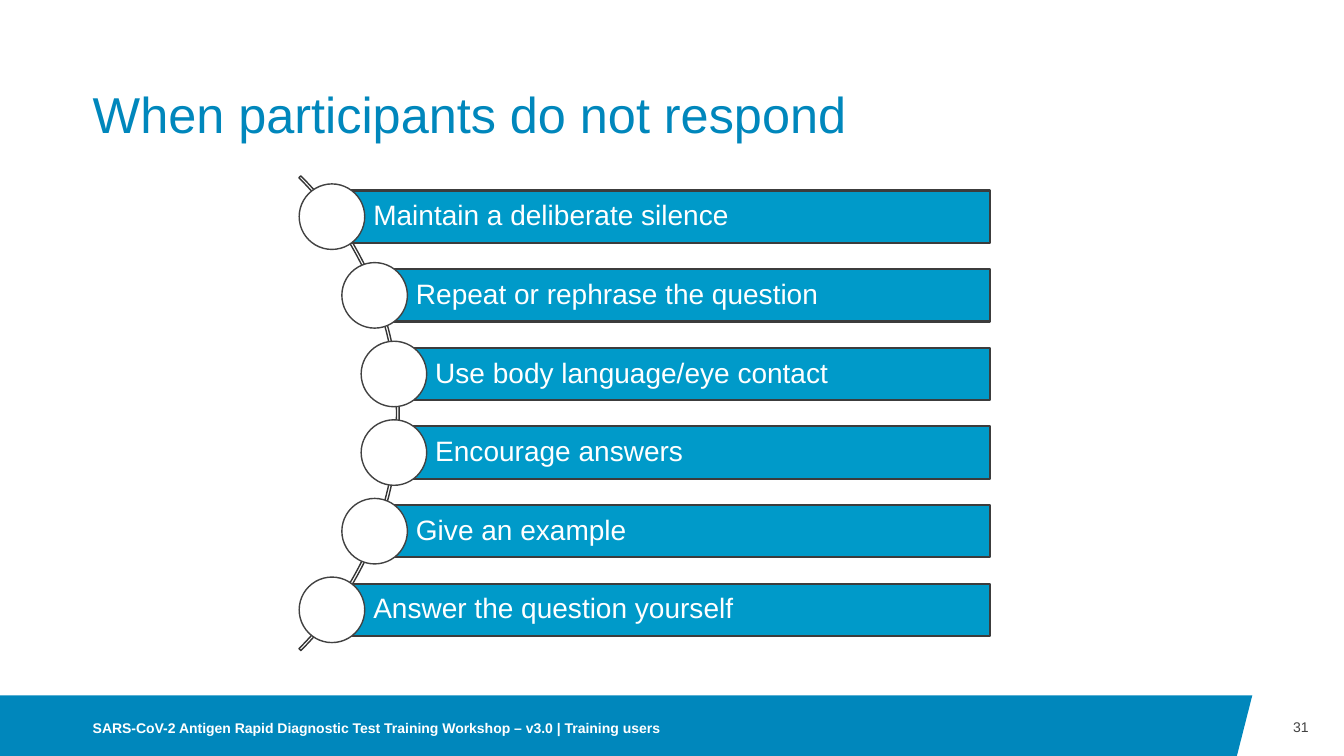
from dataclasses import dataclass
from math import sqrt

from pptx import Presentation
from pptx.dml.color import RGBColor
from pptx.enum.shapes import MSO_SHAPE as Shape
from pptx.enum.text import MSO_ANCHOR as Anchor, PP_ALIGN as Align
from pptx.util import Inches, Pt


@dataclass(frozen=True)
class Theme:
    font: str = "Arial"
    brand: str = "0087BC"
    bar: str = "009AC9"
    bar_edge: str = "3C3C3C"
    arc_edge: str = "353535"
    grey: str = "424242"
    white: str = "FFFFFF"
    title_size: int = 36
    step_size: int = 20
    footer_size: int = 10


class SlideBuilder:
    def __init__(self, slide, theme):
        self.shapes = slide.shapes
        self.theme = theme

    def paint(self, shape, fill=None, edge=None, width=1):
        shape.shadow.inherit = False
        if fill:
            shape.fill.solid()
            shape.fill.fore_color.rgb = RGBColor.from_string(fill)
        else:
            shape.fill.background()
        if edge:
            shape.line.color.rgb = RGBColor.from_string(edge)
            shape.line.width = Pt(width)
        else:
            shape.line.fill.background()

    def label(self, shape, text, size, color, anchor=Anchor.MIDDLE,
              align=Align.LEFT, bold=False, insets=(0, 0, 0, 0), spacing=1.0):
        frame = shape.text_frame
        frame.text = text
        frame.word_wrap = True
        frame.vertical_anchor = anchor
        (frame.margin_left, frame.margin_top,
         frame.margin_right, frame.margin_bottom) = map(Inches, insets)
        paragraph = frame.paragraphs[0]
        paragraph.alignment = align
        paragraph.line_spacing = spacing
        font = paragraph.runs[0].font
        font.name, font.size, font.bold = self.theme.font, Pt(size), bold
        font.color.rgb = RGBColor.from_string(color)

    def text(self, box, text, size, color, **style):
        self.label(self.shapes.add_textbox(*map(Inches, box)), text, size, color, **style)

    def preset(self, kind, box, fill=None, edge=None, width=1):
        shape = self.shapes.add_shape(kind, *map(Inches, box))
        self.paint(shape, fill, edge, width)
        return shape

    def outline(self, points, fill):
        corners = [(Inches(x), Inches(y)) for x, y in points]
        builder = self.shapes.build_freeform(*corners[0])
        builder.add_line_segments(corners[1:], close=True)
        self.paint(builder.convert_to_shape(), fill)


STEPS = [
    "Maintain a deliberate silence",
    "Repeat or rephrase the question",
    "Use body language/eye contact",
    "Encourage answers",
    "Give an example",
    "Answer the question yourself",
]
ARC_X, ARC_Y, ARC_RADIUS = 0.63, 4.1, 3.33
NODE_RADIUS = 3.3
STEP_PITCH = 0.78
BAR_HEIGHT, BAR_RIGHT = 0.52, 9.82
NODE_SIZE = 0.65


def add_steps(builder):
    theme = builder.theme
    # Thin arc running behind the nodes
    arc = builder.preset(
        Shape.BLOCK_ARC,
        (ARC_X - ARC_RADIUS, ARC_Y - ARC_RADIUS, 2 * ARC_RADIUS, 2 * ARC_RADIUS),
        edge=theme.arc_edge)
    for index, value in enumerate((189, 27, 0.004)):
        arc.adjustments[index] = value

    # Bars start on the curve, each with a round node at its start
    for index, step in enumerate(STEPS):
        offset = (index - (len(STEPS) - 1) / 2) * STEP_PITCH
        x = ARC_X + sqrt(NODE_RADIUS ** 2 - offset ** 2)
        y = ARC_Y + offset
        bar = builder.preset(
            Shape.RECTANGLE, (x, y - BAR_HEIGHT / 2, BAR_RIGHT - x, BAR_HEIGHT),
            theme.bar, theme.bar_edge, 1.5)
        builder.label(bar, step, theme.step_size, theme.white,
                      insets=(0.41, 0.06, 0.06, 0.06), spacing=0.9)
        builder.preset(
            Shape.OVAL, (x - NODE_SIZE / 2, y - NODE_SIZE / 2, NODE_SIZE, NODE_SIZE),
            theme.white, theme.grey)


def main():
    theme = Theme()
    deck = Presentation()
    deck.slide_width, deck.slide_height = Inches(13.33), Inches(7.5)
    builder = SlideBuilder(deck.slides.add_slide(deck.slide_layouts[6]), theme)

    # Footer band
    builder.outline([(0, 6.9), (12.42, 6.9), (12.26, 7.53), (0, 7.53)], theme.brand)

    # Title and page number
    builder.text((0.92, 0.4, 11.5, 1.03), "When participants do not respond",
                 theme.title_size, theme.brand, anchor=Anchor.BOTTOM, spacing=0.9)
    builder.text((12.42, 6.9, 0.56, 0.63), "31", theme.footer_size, theme.grey,
                 align=Align.RIGHT)

    # Steps along the arc
    add_steps(builder)

    # Footer text
    builder.text((0.92, 6.95, 8, 0.55),
                 "SARS-CoV-2 Antigen Rapid Diagnostic Test Training Workshop – v3.0 | Training users",
                 theme.footer_size, theme.white, bold=True)

    deck.save("out.pptx")


if __name__ == "__main__":
    main()
